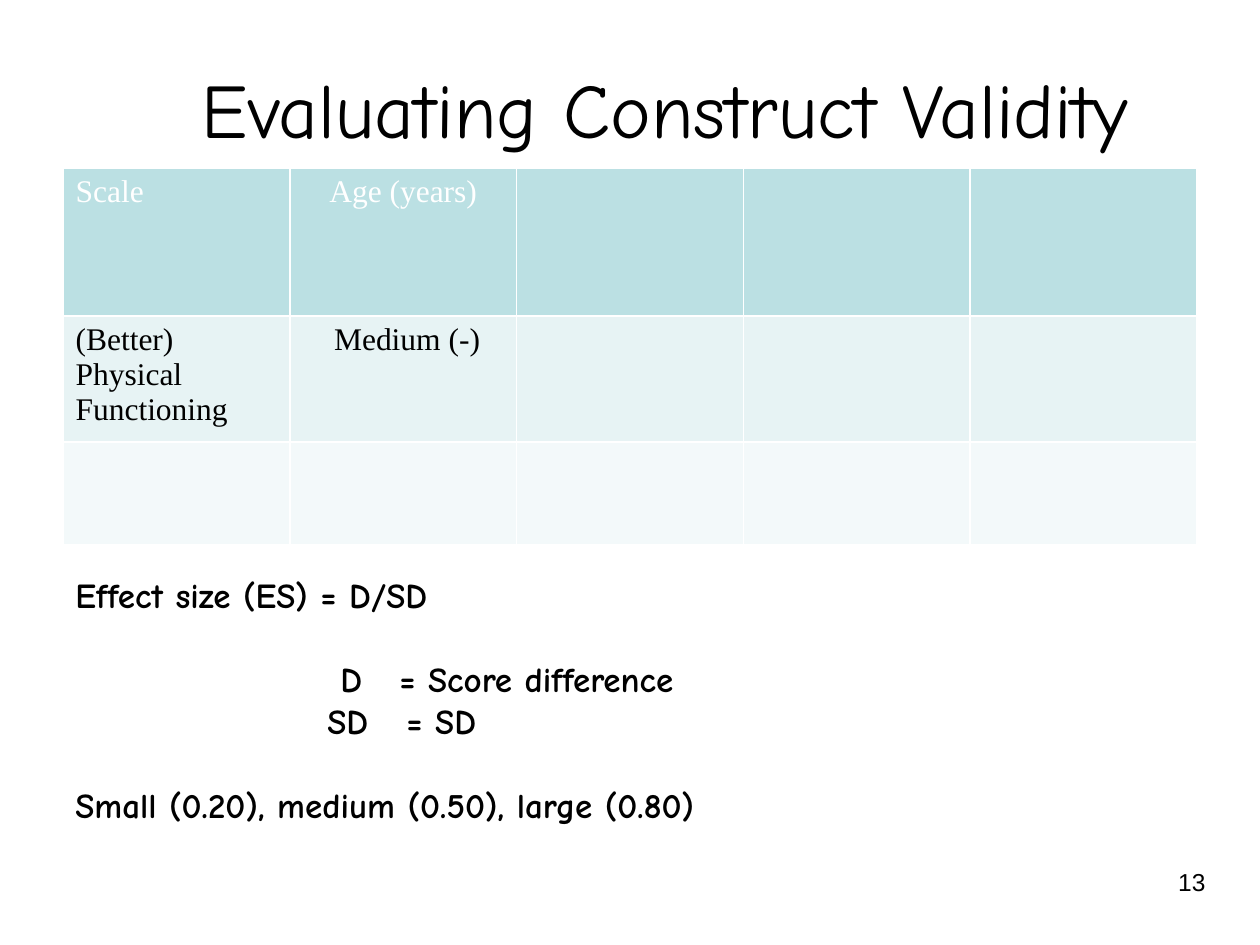
from lxml import etree
from pptx import Presentation, util as u
from pptx.dml.color import RGBColor
from pptx.enum import text
from pptx.oxml.ns import qn

SCALE = 914400 / 126
BLACK, WHITE = "000000", "FFFFFF"
LEFT, CENTER, RIGHT = text.PP_ALIGN.LEFT, text.PP_ALIGN.CENTER, text.PP_ALIGN.RIGHT


def px(length):
    return u.Emu(round(length * SCALE))


def color(value):
    return RGBColor.from_string(value)


class SlideBuilder:
    heading = {"name": "Comic Neue", "size": u.Pt(44)}
    body = {"name": "Comic Neue", "size": u.Pt(20), "bold": True}
    cell = {"name": "Times New Roman", "size": u.Pt(18), "bold": False}
    number = {"name": "Arial", "size": u.Pt(14)}

    def __init__(self, deck):
        self.page = deck.slides.add_slide(deck.slide_layouts[6])

    def add_span(self, para, words, font, fill=BLACK, align=LEFT):
        para.alignment = align
        span = para.add_run()
        span.text = words
        for name, value in font.items():
            setattr(span.font, name, value)
        span.font.color.rgb = color(fill)

    def add_tabs(self, para, stops):
        tabs = etree.SubElement(para._p.get_or_add_pPr(), qn("a:tabLst"))
        for stop in stops:
            etree.SubElement(tabs, qn("a:tab"), pos=str(px(stop)), algn="l")

    def add_text(self, place, lines, font, align=LEFT, anchor=text.MSO_ANCHOR.TOP):
        frame = self.page.shapes.add_textbox(*map(px, place)).text_frame
        frame.word_wrap = True
        frame.vertical_anchor = anchor
        for index, (words, gap, stops) in enumerate(lines):
            para = frame.add_paragraph() if index else frame.paragraphs[0]
            para.space_before = u.Pt(gap)
            self.add_span(para, words, font, align=align)
            if stops:
                self.add_tabs(para, stops)

    def add_borders(self, cell, width):
        properties = cell._tc.get_or_add_tcPr()
        for index, side in enumerate(("lnL", "lnR", "lnT", "lnB")):
            line = etree.Element(qn(f"a:{side}"), w=str(u.Pt(width)))
            fill = etree.SubElement(line, qn("a:solidFill"))
            etree.SubElement(fill, qn("a:srgbClr"), val=WHITE)
            properties.insert(index, line)

    def add_table(self, place, columns, rows):
        table = self.page.shapes.add_table(len(rows), columns, *map(px, place)).table
        table.first_row = table.horz_banding = False
        for row, (height, fill, ink, words) in zip(table.rows, rows):
            row.height = px(height)
            for index, cell in enumerate(row.cells):
                cell.fill.solid()
                cell.fill.fore_color.rgb = color(fill)
                self.add_borders(cell, 1)
                if index < len(words):
                    align = CENTER if index else LEFT
                    self.add_span(cell.text_frame.paragraphs[0], words[index], self.cell, ink, align)


def main():
    deck = Presentation()
    deck.slide_width, deck.slide_height = px(1260), px(945)
    slide = SlideBuilder(deck)

    slide.add_text((71, 21, 1189, 174), [("Evaluating Construct Validity", 0, ())],
                   slide.heading, CENTER, text.MSO_ANCHOR.MIDDLE)
    slide.add_table((63, 168, 1134, 368), 5, [
        (148, "BBE0E3", WHITE, ("Scale", "Age (years)")),
        (117, "E7F3F4", BLACK, ("(Better) Physical Functioning", " Medium (-)")),
        (103, "F3F9FA", BLACK, ()),
    ])
    slide.add_text((1016, 861, 202, 66), [("13", 0, ())], slide.number, RIGHT)
    slide.add_text((63, 567, 1134, 267), [
        ("Effect size (ES) = D/SD", 0, ()),
        ("\tD\t= Score difference", 24, (265, 324)),
        ("\tSD\t= SD", 0, (252, 331)),
        ("Small (0.20), medium (0.50), large (0.80)", 24, ()),
    ], slide.body)

    deck.save("out.pptx")


if __name__ == "__main__":
    main()
